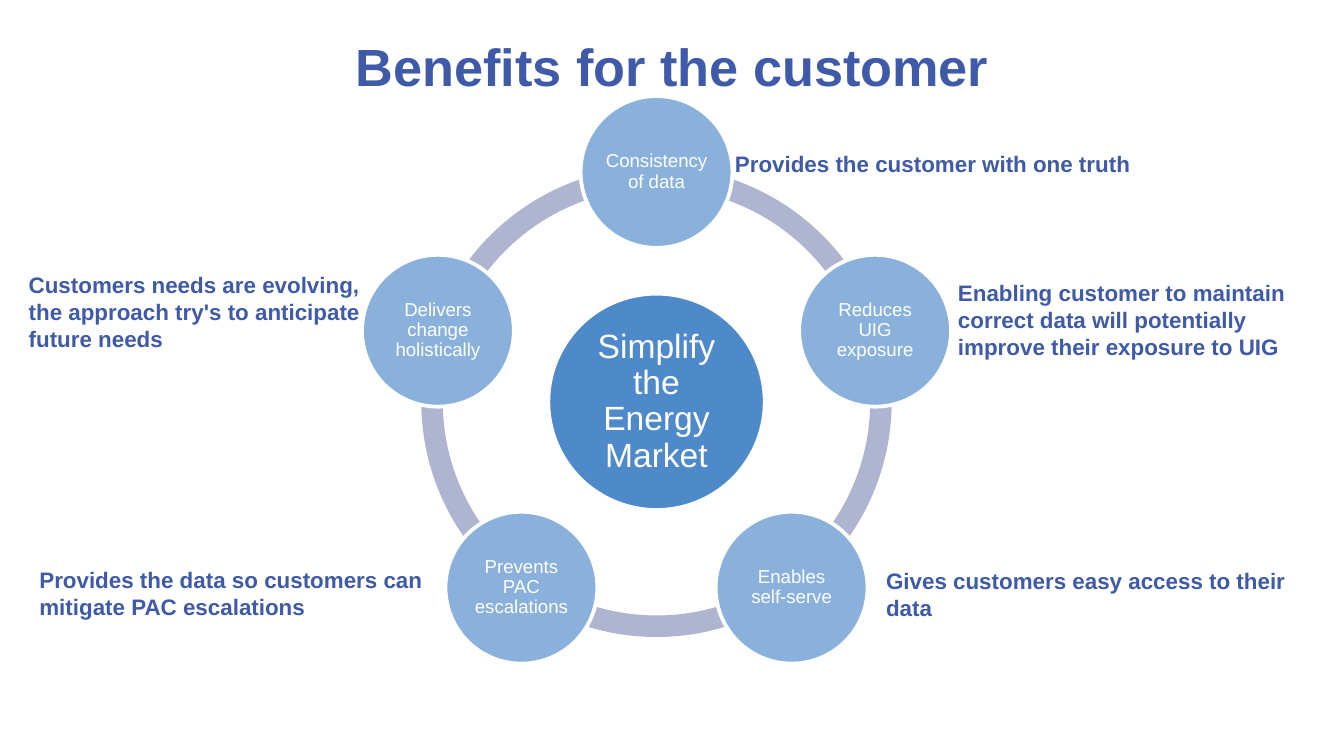
"""Build the slide "Benefits for the customer" with a ring of five benefits."""
from dataclasses import dataclass
from math import cos, radians, sin

from pptx import Presentation
from pptx.dml.color import RGBColor
from pptx.enum.shapes import MSO_SHAPE as Shape
from pptx.enum.text import MSO_ANCHOR as Anchor, MSO_AUTO_SIZE as AutoSize, PP_ALIGN as Align
from pptx.util import Emu, Pt

EMU_PER_PX = 4572
SLIDE_WIDTH, SLIDE_HEIGHT = 2000, 1125
FONT = "Arial"
WHITE, NAVY = "FFFFFF", "3E5AA8"
HUB_BLUE, NODE_BLUE, RING_GREY = "4E8ACA", "89B1DC", "AFB5D1"
CENTER_X, CENTER_Y = 977, 598
ORBIT, RING_SIZE, RING_BAND = 342, 700, 32
HUB_SIZE, NODE_SIZE = 322, 226
ADJUSTMENT_PER_DEGREE = 0.6


@dataclass(frozen=True)
class Benefit:
    label: str
    note: str
    left: int
    top: int
    width: int
    height: int


BENEFITS = (
    Benefit("Consistency of data", "Provides the customer with one truth", 1074, 213, 968, 60),
    Benefit("Reduces UIG exposure",
            "Enabling customer to maintain correct data will potentially improve their exposure to UIG",
            1406, 406, 606, 142),
    Benefit("Enables self-serve", "Gives customers easy access to their data", 1299, 834, 700, 100),
    Benefit("Prevents PAC escalations",
            "Provides the data so customers can mitigate PAC escalations", 39, 833, 692, 100),
    Benefit("Delivers change holistically",
            "Customers needs are evolving, the approach try's to anticipate future needs",
            23, 394, 542, 142),
)


def px(length: float) -> Emu:
    """Convert pixels to EMU."""
    return Emu(round(length * EMU_PER_PX))


def color(value: str) -> RGBColor:
    """Turn a hex string into a colour."""
    return RGBColor.from_string(value)


def write(text_frame, text: str, size: int, hex_color: str, bold: bool, align: Align):
    """Write one run into the first paragraph and return the paragraph."""
    paragraph = text_frame.paragraphs[0]
    paragraph.alignment = align
    run = paragraph.add_run()
    run.text = text
    run.font.name = FONT
    run.font.size = Pt(size)
    run.font.bold = bold
    run.font.color.rgb = color(hex_color)
    return paragraph


def add_centered(slide, kind: Shape, x: float, y: float, size: int, fill: str):
    """Add a filled square-framed shape around a centre point."""
    shape = slide.shapes.add_shape(kind, px(x - size / 2), px(y - size / 2), px(size), px(size))
    shape.shadow.inherit = False
    shape.fill.solid()
    shape.fill.fore_color.rgb = color(fill)
    shape.line.fill.background()
    return shape


def add_arc(slide, start: int, end: int) -> None:
    """Add the part of the ring between two angles."""
    arc = add_centered(slide, Shape.BLOCK_ARC, CENTER_X, CENTER_Y, RING_SIZE, RING_GREY)
    arc.adjustments[0] = start * ADJUSTMENT_PER_DEGREE
    arc.adjustments[1] = end * ADJUSTMENT_PER_DEGREE
    arc.adjustments[2] = RING_BAND / RING_SIZE


def add_circle(slide, x: float, y: float, size: int, fill: str, text: str,
               font_size: int, inset: int) -> None:
    """Add a white-edged circle with a centred label."""
    circle = add_centered(slide, Shape.OVAL, x, y, size, fill)
    circle.line.color.rgb = color(WHITE)
    circle.line.width = Pt(2)
    frame = circle.text_frame
    frame.word_wrap = True
    frame.vertical_anchor = Anchor.MIDDLE
    frame.margin_left = frame.margin_right = frame.margin_top = frame.margin_bottom = px(inset)
    write(frame, text, font_size, WHITE, False, Align.CENTER).line_spacing = 0.9


def add_note(slide, benefit: Benefit) -> None:
    """Add the explanation beside a benefit."""
    box = slide.shapes.add_textbox(px(benefit.left), px(benefit.top),
                                   px(benefit.width), px(benefit.height))
    box.text_frame.word_wrap = True
    box.text_frame.auto_size = AutoSize.SHAPE_TO_FIT_TEXT
    write(box.text_frame, benefit.note, 12, NAVY, True, Align.LEFT)


def add_title(slide, text: str) -> None:
    """Place and format the title placeholder."""
    title = slide.shapes.title
    title.left, title.top, title.width, title.height = px(100), px(27), px(1800), px(140)
    title.text_frame.vertical_anchor = Anchor.MIDDLE
    write(title.text_frame, text, 28, NAVY, True, Align.CENTER)


def main() -> None:
    """Build and save the presentation."""
    presentation = Presentation()
    presentation.slide_width = px(SLIDE_WIDTH)
    presentation.slide_height = px(SLIDE_HEIGHT)
    slide = presentation.slides.add_slide(presentation.slide_layouts[5])
    add_title(slide, "Benefits for the customer")
    step = 360 // len(BENEFITS)
    angles = [(270 + index * step) % 360 for index in range(len(BENEFITS))]
    for angle in angles:
        add_arc(slide, angle, (angle + step) % 360)
    add_circle(slide, CENTER_X, CENTER_Y, HUB_SIZE, HUB_BLUE, "Simplify the Energy Market", 18, 6)
    for angle, benefit in zip(angles, BENEFITS):
        x = CENTER_X + ORBIT * cos(radians(angle))
        y = CENTER_Y + ORBIT * sin(radians(angle))
        add_circle(slide, x, y, NODE_SIZE, NODE_BLUE, benefit.label, 10, 2)
    for benefit in BENEFITS:
        add_note(slide, benefit)
    presentation.save("out.pptx")


if __name__ == "__main__":
    main()
